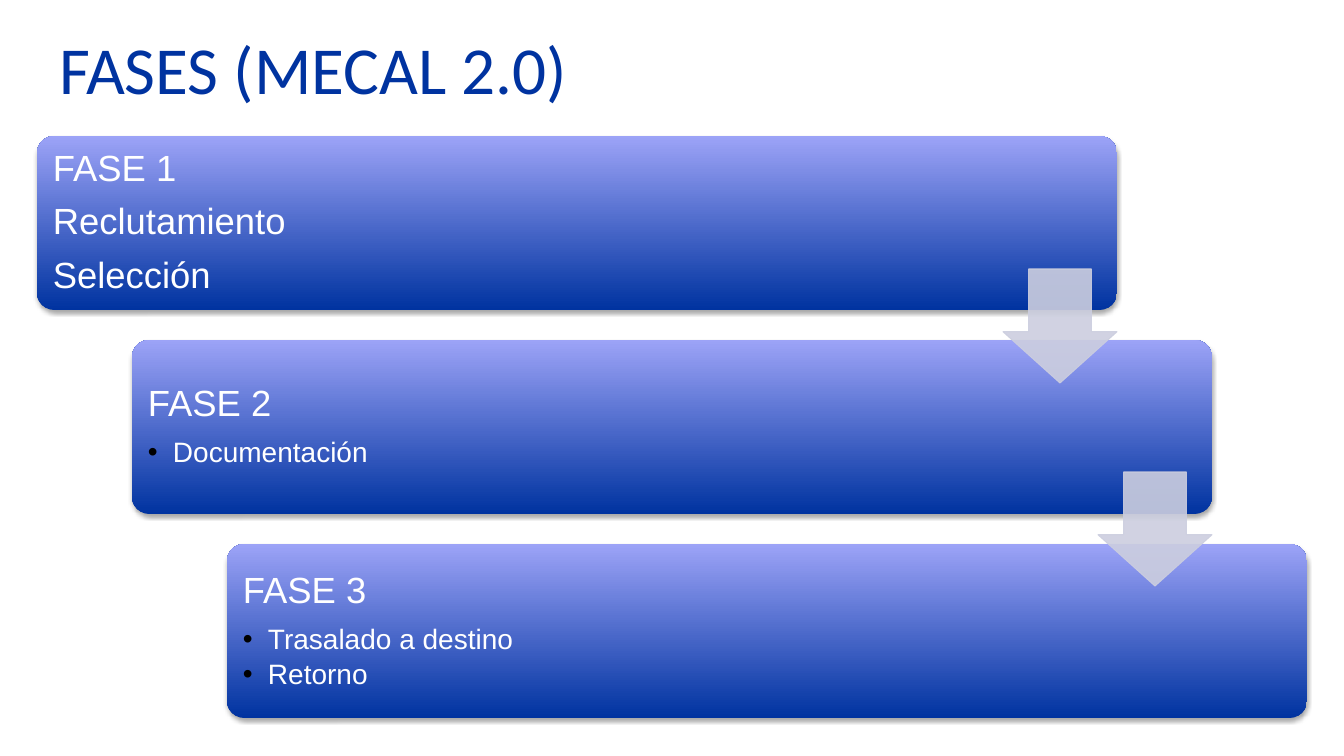
from lxml.etree import SubElement
from pptx import Presentation
from pptx.dml.color import RGBColor
from pptx.enum.shapes import MSO_SHAPE
from pptx.enum.text import MSO_ANCHOR
from pptx.oxml.ns import qn
from pptx.util import Emu, Pt

TITLE = "FASES (MECAL 2.0)"
# Each phase: main lines, bulleted lines
PHASES = [
    (["FASE 1", "Reclutamiento", "Selección"], []),
    (["FASE 2"], ["Documentación"]),
    (["FASE 3"], ["Trasalado a destino", "Retorno"]),
]

BLUE = RGBColor(0x00, 0x33, 0xA0)
LAVENDER = RGBColor(0x9C, 0xA3, 0xF7)
ARROW_GREY = RGBColor(0xCC, 0xCE, 0xDF)
WHITE = RGBColor(0xFF, 0xFF, 0xFF)

# Layout in px
PX = 914400 / 100.8
CARD_LEFT, CARD_TOP, CARD_WIDTH, CARD_HEIGHT = 37, 136, 1080, 174
STEP_X, STEP_Y = 95, 204
TEXT_INSET, TEXT_WIDTH = 5, 861
ARROW_LEFT, ARROW_TOP, ARROW_SIZE, ARROW_STEP_Y = 1003, 269, 114, 203


def px(value):
    return Emu(round(value * PX))


def add_text_box(slide, left, top, width, height, margin_x, margin_y):
    box = slide.shapes.add_textbox(px(left), px(top), px(width), px(height))
    frame = box.text_frame
    frame.word_wrap = True
    frame.vertical_anchor = MSO_ANCHOR.MIDDLE
    frame.margin_left = frame.margin_right = px(margin_x)
    frame.margin_top = frame.margin_bottom = px(margin_y)
    return frame


def style(paragraph, text, font_name, size, color, space_after=0):
    paragraph.text = text
    paragraph.line_spacing = 0.9
    paragraph.space_after = Pt(space_after)
    paragraph.font.name = font_name
    paragraph.font.size = Pt(size)
    paragraph.font.color.rgb = color


def add_bullet(paragraph):
    properties = paragraph._p.get_or_add_pPr()
    properties.set("marL", str(px(25)))
    properties.set("indent", str(-px(25)))
    color = SubElement(properties, qn("a:buClr"))
    SubElement(color, qn("a:srgbClr"), val="000000")
    SubElement(properties, qn("a:buFont"), typeface="Arial")
    SubElement(properties, qn("a:buChar"), char="•")


def add_shadow(shape):
    effects = shape._element.spPr.find(qn("a:effectLst"))
    shadow = SubElement(effects, qn("a:outerShdw"), blurRad=str(Pt(3.1)),
                        dist=str(Pt(1.8)), dir="5400000", rotWithShape="0")
    color = SubElement(shadow, qn("a:srgbClr"), val="000000")
    SubElement(color, qn("a:alpha"), val="35000")


def add_card(slide, left, top):
    card = slide.shapes.add_shape(MSO_SHAPE.ROUNDED_RECTANGLE, px(left), px(top),
                                  px(CARD_WIDTH), px(CARD_HEIGHT))
    card.adjustments[0] = 0.1
    card.fill.gradient()
    card.fill.gradient_angle = 90
    for stop, color in zip(card.fill.gradient_stops, (BLUE, LAVENDER)):
        stop.color.rgb = color
    card.line.fill.background()
    card.shadow.inherit = False
    add_shadow(card)


def add_arrow(slide, left, top):
    arrow = slide.shapes.add_shape(MSO_SHAPE.DOWN_ARROW, px(left), px(top),
                                   px(ARROW_SIZE), px(ARROW_SIZE))
    arrow.adjustments[0], arrow.adjustments[1] = 0.55, 0.45
    arrow.shadow.inherit = False
    arrow.line.width = Pt(0.75)
    for fill in (arrow.fill, arrow.line.fill):
        fill.solid()
        fill.fore_color.rgb = ARROW_GREY
    for color in arrow._element.spPr.iter(qn("a:srgbClr")):
        SubElement(color, qn("a:alpha"), val="90000")


def main():
    presentation = Presentation()
    presentation.slide_width, presentation.slide_height = px(1344), px(756)
    slide = presentation.slides.add_slide(presentation.slide_layouts[6])

    # Phase cards
    for index, (headings, bullets) in enumerate(PHASES):
        left = CARD_LEFT + index * STEP_X
        top = CARD_TOP + index * STEP_Y
        add_card(slide, left, top)
        frame = add_text_box(slide, left + TEXT_INSET, top + TEXT_INSET, TEXT_WIDTH,
                             CARD_HEIGHT - 2 * TEXT_INSET, 11, 11)
        for number, text in enumerate(headings + bullets):
            paragraph = frame.add_paragraph() if number else frame.paragraphs[0]
            if number < len(headings):
                style(paragraph, text, "Arial", 26, WHITE, 10)
            else:
                paragraph.level = 1
                paragraph.line_spacing = 0.9
                paragraph.space_after = Pt(3.5)
                add_bullet(paragraph)
                style(paragraph, text, "Arial", 20, WHITE, 3.5)

    # Arrows between cards
    for index in range(len(PHASES) - 1):
        add_arrow(slide, ARROW_LEFT + index * STEP_X, ARROW_TOP + index * ARROW_STEP_Y)

    # Title
    frame = add_text_box(slide, 49, 0, 1159, 146, 10, 5)
    style(frame.paragraphs[0], TITLE, "Calibri", 48, BLUE)

    presentation.save("out.pptx")


if __name__ == "__main__":
    main()
